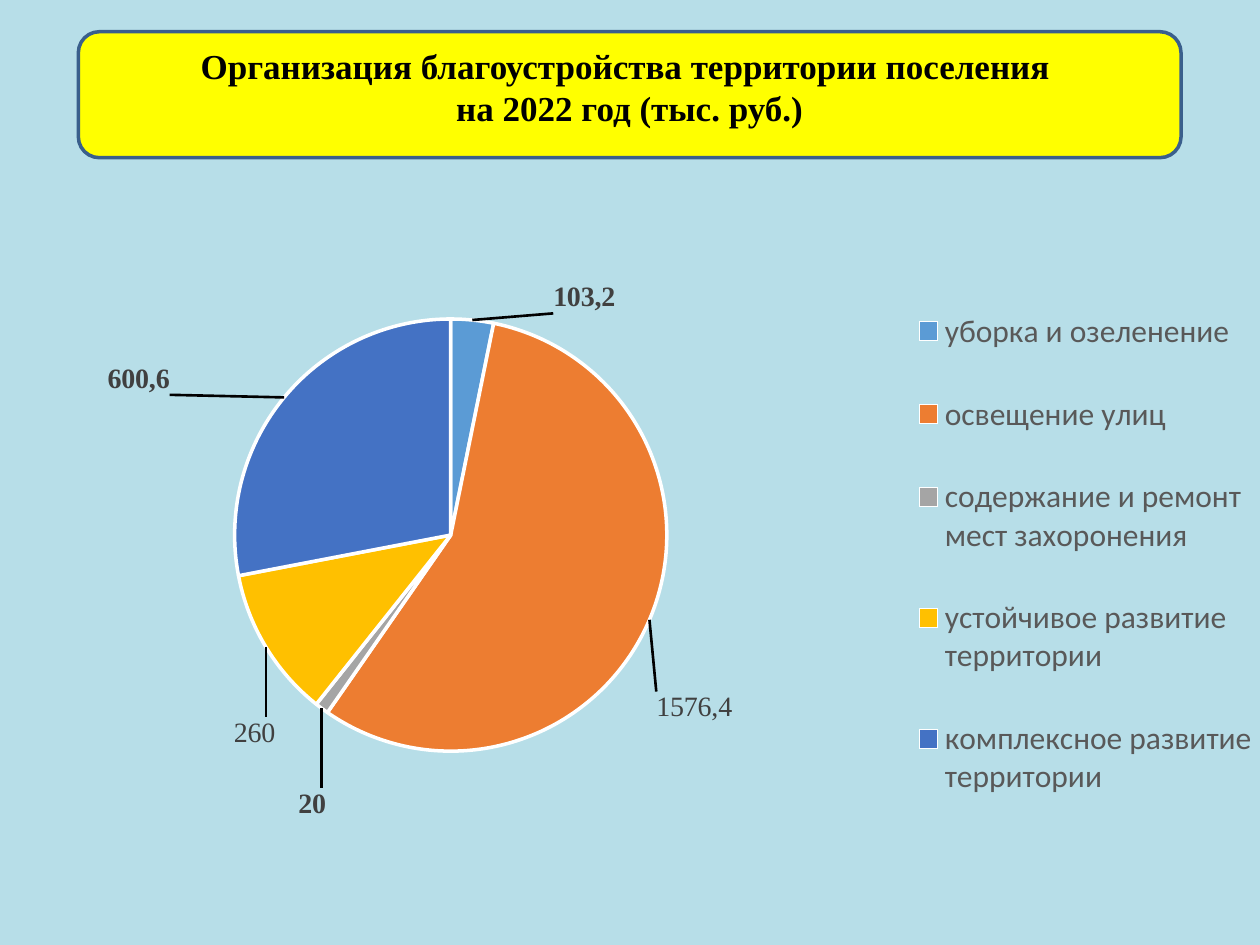
from dataclasses import dataclass

from lxml.etree import SubElement
from pptx import Presentation
from pptx.chart.data import CategoryChartData
from pptx.chart.series import PieSeries
from pptx.dml.color import RGBColor
from pptx.enum.chart import XL_CHART_TYPE, XL_LABEL_POSITION, XL_LEGEND_POSITION
from pptx.enum.shapes import MSO_SHAPE
from pptx.enum.text import MSO_ANCHOR, PP_ALIGN
from pptx.oxml import parse_xml
from pptx.oxml.ns import nsdecls, qn
from pptx.slide import Slide
from pptx.util import Cm, Pt

SERIF = "Times New Roman"
SANS = "Calibri"


@dataclass(frozen=True)
class Slice:
    category: str
    value: float
    color: str
    label: str  # empty: the value itself is shown
    bold: bool
    shift: tuple[float, float]  # label offset in percent of the chart


SLICES = [
    Slice("уборка и озеленение", 62, "5B9BD5", "103,2", True, (5.6, 0.1)),
    Slice("освещение улиц", 1100, "ED7D31", "1576,4", False, (0, 9.6)),
    Slice("содержание и ремонт мест захоронения", 20, "A5A5A5", "", True, (0.6, 10.3)),
    Slice("устойчивое развитие территории", 220, "FFC000", "260", False, (1.1, 9.3)),
    Slice("комплексное развитие территории", 545.7, "4472C4", "600,6", True, (-7.6, 0.3)),
]
TITLE_LINES = ["Организация благоустройства территории поселения ", "на 2022 год (тыс. руб.)"]


def paint(color_format, color: str) -> None:
    color_format.rgb = RGBColor.from_string(color)


def style_font(font, name: str, size: int, color: str, bold: bool = False) -> None:
    font.name, font.size, font.bold = name, Pt(size), bold
    paint(font.color, color)


def set_layout(parent, index: int, modes: dict[str, str], **percents: float) -> None:
    """Give a chart element a manual layout, placed at the given child index."""
    for old in parent.findall(qn("c:layout")):
        parent.remove(old)
    layout = parse_xml(f"<c:layout {nsdecls('c')}><c:manualLayout/></c:layout>")
    shares = {tag: str(round(percent / 100, 4)) for tag, percent in percents.items()}
    for tag, value in (modes | shares).items():
        SubElement(layout[0], qn(f"c:{tag}")).set("val", value)
    parent.insert(index, layout)


def add_title(page: Slide) -> None:
    box = page.shapes.add_shape(
        MSO_SHAPE.ROUNDED_RECTANGLE, Cm(1.58), Cm(0.64), Cm(22.23), Cm(2.54))
    box.shadow.inherit = False
    box.fill.solid()
    paint(box.fill.fore_color, "FFFF00")
    paint(box.line.color, "3A5F8C")
    box.line.width = Pt(2)
    frame = box.text_frame
    frame.word_wrap = True
    frame.vertical_anchor = MSO_ANCHOR.TOP
    for number, line in enumerate(TITLE_LINES):
        para = frame.add_paragraph() if number else frame.paragraphs[0]
        para.alignment = PP_ALIGN.CENTER
        span = para.add_run()
        span.text = line
        style_font(span.font, SERIF, 20, "000000", True)


def style_slice(series: PieSeries, number: int, part: Slice) -> None:
    point = series.points[number]
    point.format.fill.solid()
    paint(point.format.fill.fore_color, part.color)
    paint(point.format.line.color, "FFFFFF")
    point.format.line.width = Pt(2)

    label = point.data_label
    if part.label:
        span = label.text_frame.paragraphs[0].add_run()
        span.text = part.label
        font = span.font
    else:
        font = label.font
    style_font(font, SERIF, 16, "404040", part.bold)
    label.position = XL_LABEL_POSITION.OUTSIDE_END
    element = series.data_labels._element.findall(qn("c:dLbl"))[number]
    set_layout(element, 1, {}, x=part.shift[0], y=part.shift[1])


def add_pie(page: Slide) -> None:
    data = CategoryChartData()
    data.categories = [part.category for part in SLICES]
    data.add_series("Series 1", [part.value for part in SLICES])
    chart = page.shapes.add_chart(
        XL_CHART_TYPE.PIE, Cm(-3.1), Cm(4.09), Cm(28.88), Cm(14.45), data).chart
    chart.has_title = False
    style_font(chart.font, SANS, 10, "000000")
    plot = chart.plots[0]
    plot.vary_by_categories = True
    series = plot.series[0]

    # Labels and their leader lines
    labels = series.data_labels
    labels.show_value = True
    labels.position = XL_LABEL_POSITION.OUTSIDE_END
    style_font(labels.font, SERIF, 16, "404040", True)
    for number, part in enumerate(SLICES):
        style_slice(series, number, part)
    for old in labels._element.findall(qn("c:showLeaderLines")):
        labels._element.remove(old)
    SubElement(labels._element, qn("c:showLeaderLines")).set("val", "1")
    labels._element.append(parse_xml(
        f"<c:leaderLines {nsdecls('c', 'a')}><c:spPr><a:ln w='{Pt(1.5)}'><a:solidFill>"
        "<a:srgbClr val='000000'/></a:solidFill></a:ln></c:spPr></c:leaderLines>"))

    # Legend and plot placement
    chart.has_legend = True
    legend = chart.legend
    legend.position = XL_LEGEND_POSITION.BOTTOM
    legend.include_in_layout = False
    style_font(legend.font, SANS, 18, "595959")
    edges = {"xMode": "edge", "yMode": "edge"}
    set_layout(legend._element, 1, edges, x=74, y=9, w=25, h=80)
    set_layout(chart._chartSpace.chart.plotArea, 0, {"layoutTarget": "inner"} | edges,
               x=15.7, y=16.2, w=53, h=60.3)


def main() -> None:
    deck = Presentation()
    deck.slide_width, deck.slide_height = Cm(25.4), Cm(19.05)
    page = deck.slides.add_slide(deck.slide_layouts[6])
    page.background.fill.solid()
    paint(page.background.fill.fore_color, "B7DEE8")
    add_title(page)
    add_pie(page)
    deck.save("out.pptx")


if __name__ == "__main__":
    main()
